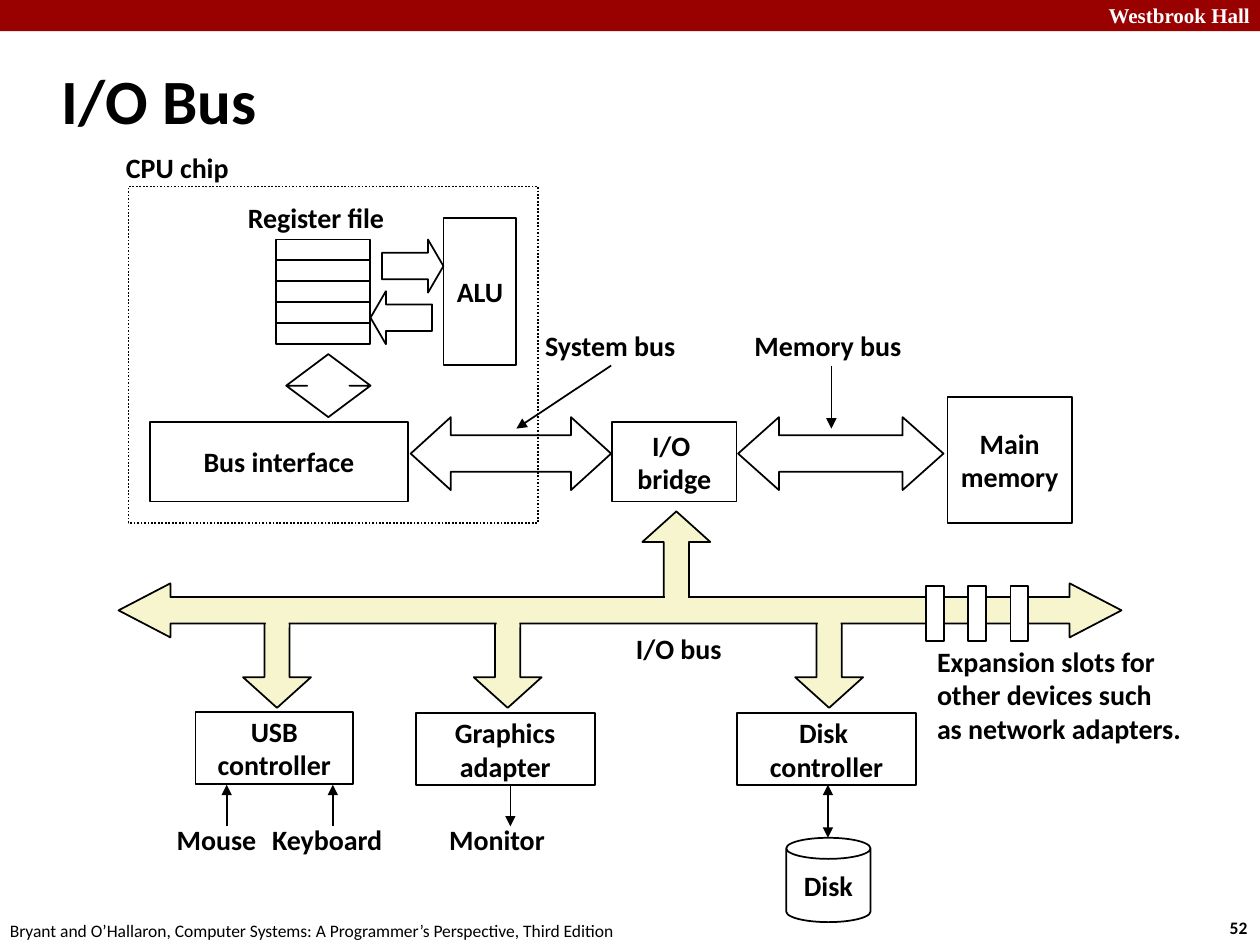
"""Draw the I/O bus diagram of a computer system on one slide."""
from dataclasses import dataclass
from typing import Optional

from lxml import etree
from pptx import Presentation
from pptx import util as u
from pptx.dml.color import RGBColor
from pptx.enum import dml, shapes, text
from pptx.oxml import ns

Kind = shapes.MSO_SHAPE
Align = text.PP_ALIGN


@dataclass(frozen=True)
class Theme:
    banner: RGBColor = RGBColor(0x99, 0x00, 0x00)
    bus: RGBColor = RGBColor(0xF7, 0xF5, 0xCD)
    ink: RGBColor = RGBColor(0x00, 0x00, 0x00)
    paper: RGBColor = RGBColor(0xFF, 0xFF, 0xFF)
    body_font: str = "Calibri"
    banner_font: str = "Times New Roman"
    title: int = 36
    body: int = 16
    header: int = 12
    footer: int = 10
    stroke: int = 1


THEME = Theme()


@dataclass(frozen=True)
class Block:
    left: float
    top: float
    width: float
    height: float
    words: str = ""
    kind: Kind = Kind.RECTANGLE
    adjustments: tuple[float, ...] = ()
    fill: Optional[RGBColor] = None
    outlined: bool = True
    dotted: bool = False


@dataclass(frozen=True)
class Label:
    left: float
    top: float
    width: float
    words: str
    height: float = 0.94
    size: int = THEME.body
    bold: bool = True
    align: Align = Align.LEFT
    font: str = THEME.body_font
    color: RGBColor = THEME.ink


@dataclass(frozen=True)
class Arrow:
    start: tuple[float, float]
    end: tuple[float, float]
    double: bool = False


def write(frame, label: Label) -> None:
    """Fill a text frame with one paragraph per line of the label."""
    frame.word_wrap = False
    frame.vertical_anchor = text.MSO_ANCHOR.MIDDLE
    for index, line in enumerate(label.words.split("\n")):
        para = frame.add_paragraph() if index else frame.paragraphs[0]
        para.text = line
        para.alignment = label.align
        para.font.name = label.font
        para.font.size = u.Pt(label.size)
        para.font.bold = label.bold
        para.font.color.rgb = label.color


def draw_block(page, block: Block) -> None:
    """Draw a preset shape with its optional caption."""
    lengths = (block.left, block.top, block.width, block.height)
    shape = page.shapes.add_shape(block.kind, *map(u.Cm, lengths))
    shape.shadow.inherit = False
    for index, value in enumerate(block.adjustments):
        shape.adjustments[index] = value
    if block.fill is None:
        shape.fill.background()
    else:
        shape.fill.solid()
        shape.fill.fore_color.rgb = block.fill
    if block.outlined:
        shape.line.color.rgb = THEME.ink
        shape.line.width = u.Pt(THEME.stroke)
        if block.dotted:
            shape.line.dash_style = dml.MSO_LINE.ROUND_DOT
    else:
        shape.line.fill.background()
    if block.words:
        write(shape.text_frame, Label(0, 0, 0, block.words, align=Align.CENTER))


def draw_label(page, label: Label) -> None:
    """Draw a text box."""
    lengths = (label.left, label.top, label.width, label.height)
    box = page.shapes.add_textbox(*map(u.Cm, lengths))
    write(box.text_frame, label)


def draw_arrow(page, arrow: Arrow) -> None:
    """Draw a straight line with a head at one end or both."""
    line = page.shapes.add_connector(
        shapes.MSO_CONNECTOR.STRAIGHT, *map(u.Cm, arrow.start + arrow.end)
    )
    line.line.color.rgb = THEME.ink
    line.line.width = u.Pt(THEME.stroke)
    stroke = line.line._get_or_add_ln()
    for end in ("a:headEnd", "a:tailEnd") if arrow.double else ("a:tailEnd",):
        etree.SubElement(stroke, ns.qn(end), type="triangle")
    etree.SubElement(line._element.spPr, ns.qn("a:effectLst"))


def bus_branch(left: float, top: float, kind: Kind) -> Block:
    """Describe a short arrow that joins a device to the I/O bus."""
    return Block(left, top, 1.37, 1.9, kind=kind, adjustments=(0.37, 0.45), fill=THEME.bus)


def joint(left: float, top: float) -> Block:
    """Describe the patch that merges a branch at this left edge with the bus."""
    return Block(left + 0.46, top, 0.46, 0.43, fill=THEME.bus, outlined=False)


BRIDGE_BRANCH = 12.95
DEVICE_BRANCHES = (4.9, 9.55, 16.03)

BLOCKS = [
    Block(0, 0, 25.4, 0.63, fill=THEME.banner, outlined=False),
    Block(19.1, 8, 2.51, 2.54, "Main\nmemory"),
    Block(14.88, 8.41, 4.14, 1.47, kind=Kind.LEFT_RIGHT_ARROW, adjustments=(0.5, 0.56)),
    Block(12.34, 8.51, 2.51, 1.6, "I/O \nbridge"),
    Block(8.28, 8.41, 4.04, 1.47, kind=Kind.LEFT_RIGHT_ARROW, adjustments=(0.5, 0.55)),
    Block(3.02, 8.51, 5.21, 1.6, "Bus interface"),
    *(Block(5.56, 4.83 + 0.42 * row, 1.9, 0.42) for row in range(5)),
    Block(7.7, 4.83, 1.24, 1.07, kind=Kind.RIGHT_ARROW, adjustments=(0.5, 0.29)),
    Block(7.47, 5.87, 1.24, 1.07, kind=Kind.LEFT_ARROW, adjustments=(0.5, 0.29)),
    Block(8.94, 4.39, 1.47, 2.97, "ALU"),
    Block(5.77, 7.14, 1.7, 1.27, kind=Kind.UP_DOWN_ARROW, adjustments=(0.2, 0.5)),
    Block(2.59, 3.76, 8.26, 6.78, dotted=True),
    bus_branch(BRIDGE_BRANCH, 10.31, Kind.UP_ARROW),
    *(bus_branch(left, 12.37, Kind.DOWN_ARROW) for left in DEVICE_BRANCHES),
    Block(14.86, 14.38, 3.61, 1.45, "Disk \ncontroller"),
    Block(8.38, 14.38, 3.61, 1.45, "Graphics\nadapter"),
    Block(3.94, 14.35, 3.18, 1.45, "USB\ncontroller"),
    Block(15.85, 16.89, 1.7, 1.7, "Disk", kind=Kind.CAN, adjustments=(0.25,)),
    Block(2.39, 11.76, 20.22, 1.09, kind=Kind.LEFT_RIGHT_ARROW,
          adjustments=(0.49, 0.96), fill=THEME.bus),
    joint(BRIDGE_BRANCH, 12.01),
    *(joint(left, 12.22) for left in DEVICE_BRANCHES),
    *(Block(18.67 + 0.85 * slot, 11.81, 0.36, 1.12, fill=THEME.paper) for slot in range(3)),
]

ARROWS = [
    Arrow((12.32, 7.37), (10.41, 8.64)),
    Arrow((16.76, 7.37), (16.76, 8.64)),
    Arrow((4.57, 16.66), (4.57, 15.82)),
    Arrow((6.71, 16.66), (6.71, 15.82)),
    Arrow((10.29, 15.82), (10.29, 16.66)),
    Arrow((16.69, 15.82), (16.69, 16.89), double=True),
]

LABELS = [
    Label(21.7, -0.08, 3.75, "Westbrook Hall", 0.76, THEME.header, align=Align.RIGHT,
          font=THEME.banner_font, color=THEME.paper),
    Label(24.54, 18.36, 0.94, "52", 0.69, THEME.footer),
    Label(-0.05, 18.42, 12.9, "Bryant and O’Hallaron, Computer Systems: "
          "A Programmer’s Perspective, Third Edition", 0.69, THEME.footer, bold=False),
    Label(0.99, 0.94, 21.08, "I/O Bus", 2.11, THEME.title),
    Label(4.72, 3.91, 3.3, "Register file", align=Align.CENTER),
    Label(2.29, 2.9, 2.62, "CPU chip"),
    Label(10.74, 6.5, 3.18, "System bus"),
    Label(14.96, 6.5, 3.51, "Memory bus"),
    Label(3.3, 16.46, 2.13, "Mouse", align=Align.CENTER),
    Label(5.21, 16.46, 2.77, "Keyboard", align=Align.CENTER),
    Label(8.79, 16.46, 2.46, "Monitor", align=Align.CENTER),
    Label(12.57, 12.6, 2.26, "I/O bus"),
    Label(18.64, 12.85, 5.49,
          "Expansion slots for\nother devices such\nas network adapters.", 2.3),
]


def main() -> None:
    """Build the slide and save it."""
    deck = Presentation()
    deck.slide_width, deck.slide_height = u.Cm(25.4), u.Cm(19.05)
    page = deck.slides.add_slide(deck.slide_layouts[6])
    for block in BLOCKS:
        draw_block(page, block)
    for arrow in ARROWS:
        draw_arrow(page, arrow)
    for label in LABELS:
        draw_label(page, label)
    deck.save("out.pptx")


if __name__ == "__main__":
    main()
